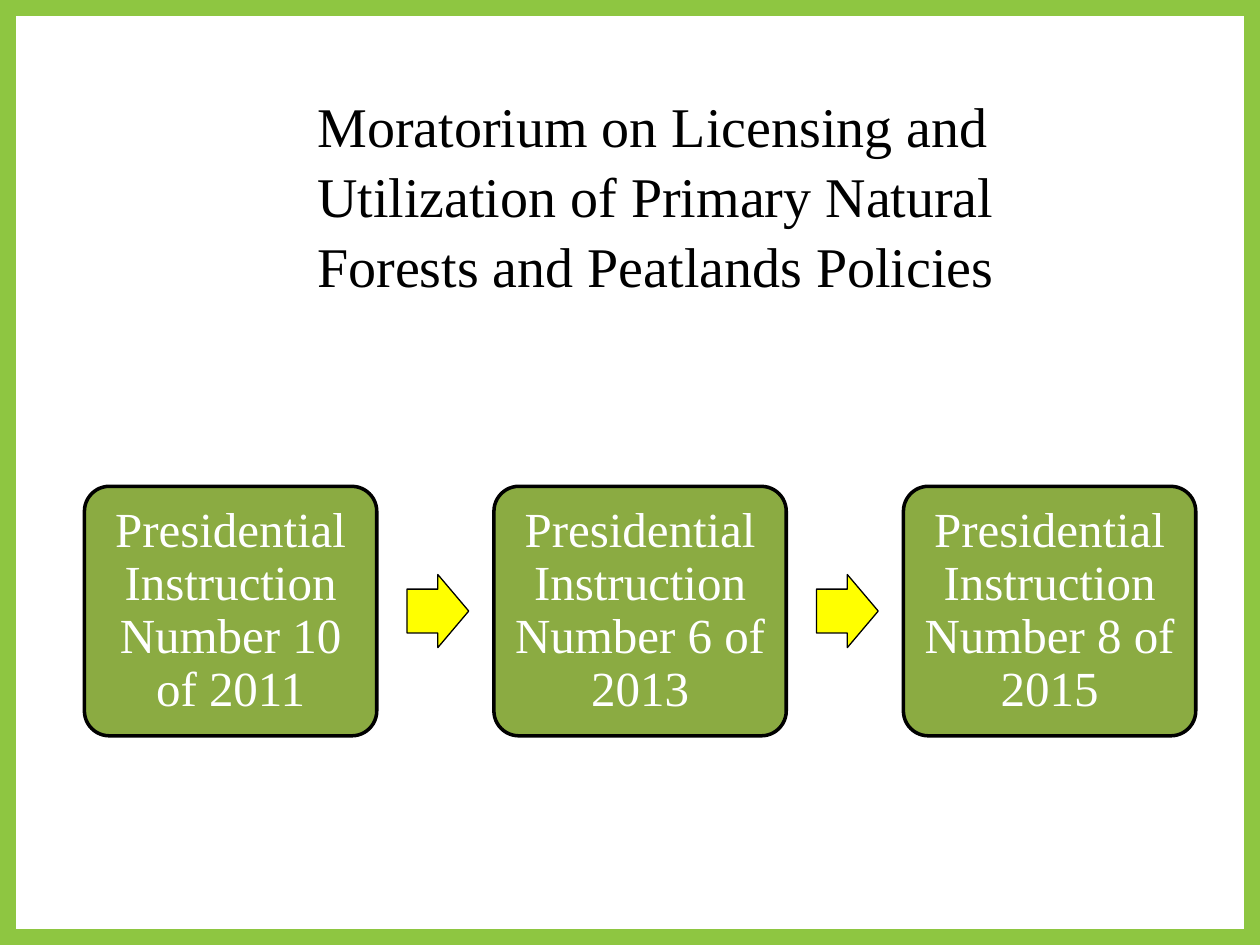
from dataclasses import dataclass

from pptx import Presentation
from pptx.dml.color import RGBColor
from pptx.enum.shapes import MSO_SHAPE
from pptx.enum.text import MSO_ANCHOR, PP_ALIGN
from pptx.shapes.autoshape import Shape
from pptx.slide import Slide
from pptx.text.text import TextFrame
from pptx.util import Inches, Pt

RECT = MSO_SHAPE.RECTANGLE
ROUND = MSO_SHAPE.ROUNDED_RECTANGLE
ARROW = MSO_SHAPE.RIGHT_ARROW
MIDDLE, BOTTOM = MSO_ANCHOR.MIDDLE, MSO_ANCHOR.BOTTOM
LEFT, CENTER = PP_ALIGN.LEFT, PP_ALIGN.CENTER


@dataclass(frozen=True)
class Theme:
    font: str = "Times New Roman"
    title: int = 32
    step: int = 28
    frame: str = "8EC641"
    card: str = "8BAB42"
    arrow: str = "FFFF00"
    dark: str = "000000"
    light: str = "FFFFFF"


@dataclass(frozen=True)
class Box:
    left: float
    top: float
    width: float
    height: float

    def shift(self, gap: float) -> "Box":
        return Box(self.left + gap, self.top, self.width, self.height)

    def place(self) -> list[Inches]:
        return [Inches(n) for n in (self.left, self.top, self.width, self.height)]


THEME = Theme()
STEPS = [
    "Presidential Instruction Number 10 of 2011",
    "Presidential Instruction Number 6 of 2013",
    "Presidential Instruction Number 8 of 2015",
]
PITCH = 3.25
CARD = Box(0.67, 3.86, 2.32, 1.98)
POINTER = Box(3.23, 4.56, 0.49, 0.58)


def draw(slide: Slide, kind: MSO_SHAPE, box: Box, fill: str | None,
         line: str, weight: float, bends: tuple[float, ...] = ()) -> Shape:
    shape = slide.shapes.add_shape(kind, *box.place())
    shape.shadow.inherit = False
    if fill is None:
        shape.fill.background()
    else:
        shape.fill.solid()
        shape.fill.fore_color.rgb = RGBColor.from_string(fill)
    shape.line.color.rgb = RGBColor.from_string(line)
    shape.line.width = Pt(weight)
    for i, bend in enumerate(bends):
        shape.adjustments[i] = bend
    return shape


def write(frame: TextFrame, text: str, size: int, color: str, align: PP_ALIGN,
          anchor: MSO_ANCHOR, space: float, inset: float, foot: float) -> None:
    frame.word_wrap = True
    frame.vertical_anchor = anchor
    frame.margin_left = frame.margin_right = frame.margin_top = Inches(inset)
    frame.margin_bottom = Inches(foot)
    frame.text = text
    para = frame.paragraphs[0]
    para.alignment = align
    para.line_spacing = space
    for run in para.runs:
        run.font.name = THEME.font
        run.font.size = Pt(size)
        run.font.color.rgb = RGBColor.from_string(color)


def main() -> None:
    deck = Presentation()
    deck.slide_width, deck.slide_height = Inches(10), Inches(7.5)
    slide = deck.slides.add_slide(deck.slide_layouts[6])

    # Slide border
    draw(slide, RECT, Box(0, 0, 10, 7.5), None, THEME.frame, 18)

    # Title
    title = slide.shapes.add_textbox(*Box(2.42, 0.83, 6.73, 2.17).place())
    write(title.text_frame,
          "Moratorium on Licensing and Utilization of Primary Natural "
          "Forests and Peatlands Policies",
          THEME.title, THEME.dark, LEFT, BOTTOM, 1.04, 0.1, 0.63)

    # Steps, with an arrow after each but the last
    for i, text in enumerate(STEPS):
        card = draw(slide, ROUND, CARD.shift(i * PITCH), THEME.card,
                    THEME.dark, 2, (0.1,))
        write(card.text_frame, text, THEME.step, THEME.light, CENTER, MIDDLE,
              0.9, 0.06, 0.06)
        if i < len(STEPS) - 1:
            draw(slide, ARROW, POINTER.shift(i * PITCH), THEME.arrow,
                 THEME.dark, 0.75, (0.6, 0.5))

    deck.save("out.pptx")


if __name__ == "__main__":
    main()
